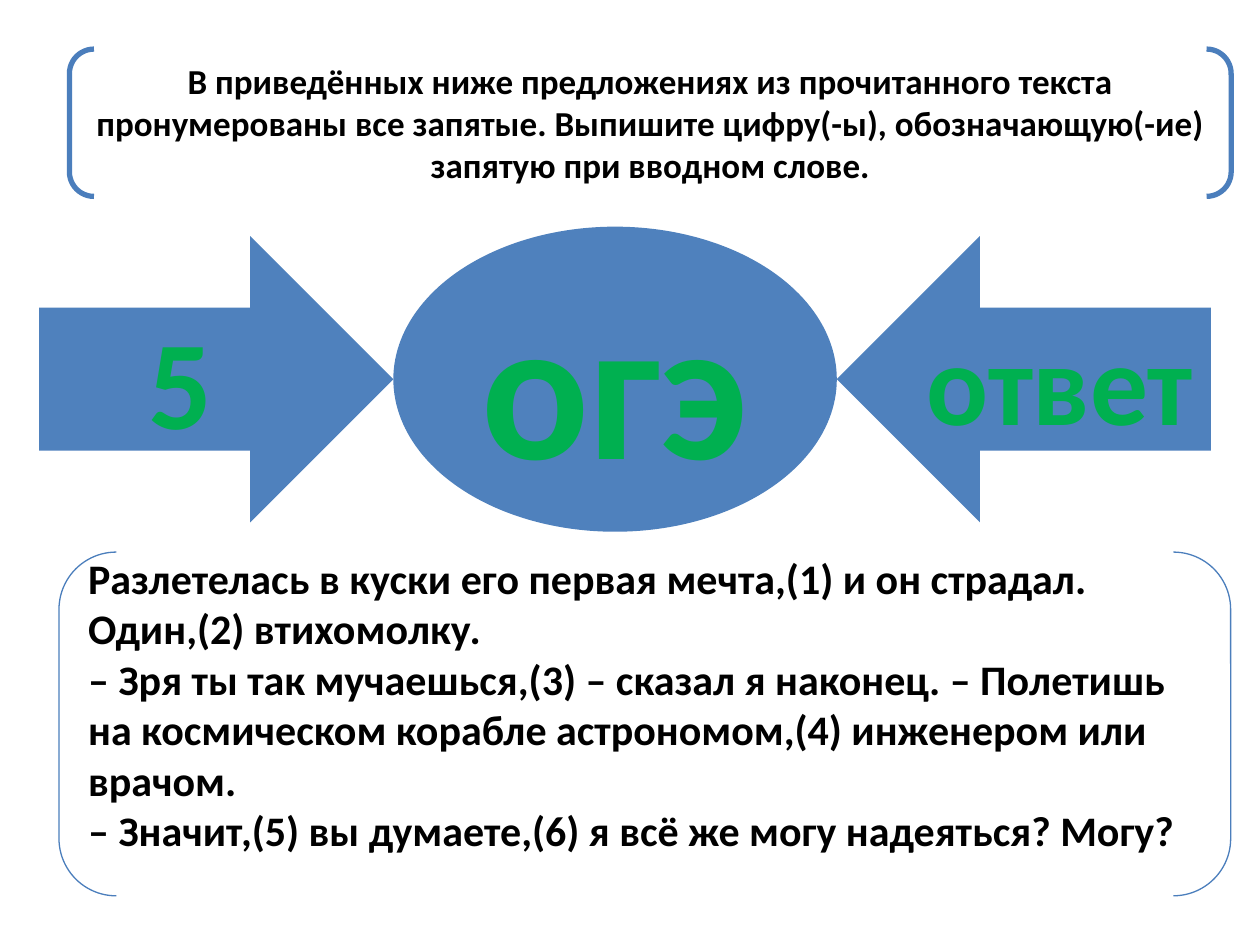
from dataclasses import dataclass

from pptx import Presentation
from pptx.dml.color import RGBColor
from pptx.enum.shapes import MSO_SHAPE
from pptx.enum.text import MSO_ANCHOR, PP_ALIGN
from pptx.util import Cm, Pt

BRACKETS = MSO_SHAPE.DOUBLE_BRACKET
RIGHT_ARROW = MSO_SHAPE.RIGHT_ARROW
LEFT_ARROW = MSO_SHAPE.LEFT_ARROW
OVAL = MSO_SHAPE.OVAL
MIDDLE = MSO_ANCHOR.MIDDLE
LEFT = PP_ALIGN.LEFT
CENTER = PP_ALIGN.CENTER


@dataclass(frozen=True)
class Theme:
    font: str = "Calibri"
    ink: RGBColor = RGBColor(0, 0, 0)
    accent: RGBColor = RGBColor(0x00, 0xB0, 0x50)
    fill: RGBColor = RGBColor(0x4F, 0x81, 0xBD)
    line: RGBColor = RGBColor(0x4B, 0x7E, 0xBC)
    task_size: int = 20
    passage_size: int = 24
    number_size: int = 72
    answer_size: int = 66
    exam_size: int = 115


THEME = Theme()

TASK = [
    "В приведённых ниже предложениях из прочитанного текста пронумерованы все запятые. "
    "Выпишите цифру(-ы), обозначающую(-ие) запятую при вводном слове.",
]
PASSAGE = [
    "Разлетелась в куски его первая мечта,(1) и он страдал. Один,(2) втихомолку.",
    "– Зря ты так мучаешься,(3) – сказал я наконец. – Полетишь на космическом корабле "
    "астрономом,(4) инженером или врачом.",
    "– Значит,(5) вы думаете,(6) я всё же могу надеяться? Могу?",
]


def add_shape(page, kind, box, lines, size, color, align):
    shape = page.shapes.add_shape(kind, *(Cm(length) for length in box))
    shape.shadow.inherit = False
    frame = shape.text_frame
    frame.word_wrap = True
    frame.vertical_anchor = MIDDLE
    for index, line in enumerate(lines):
        para = frame.paragraphs[0] if index == 0 else frame.add_paragraph()
        para.text = line
        para.alignment = align
        para.font.name = THEME.font
        para.font.size = Pt(size)
        para.font.bold = True
        para.font.color.rgb = color
    return shape


def add_bracketed_text(page, box, lines, size, align, line_width, bottom_inset):
    shape = add_shape(page, BRACKETS, box, lines, size, THEME.ink, align)
    shape.fill.background()
    shape.line.color.rgb = THEME.line
    shape.line.width = Pt(line_width)
    shape.text_frame.margin_bottom = Cm(bottom_inset)


def add_arrow_row(page, box):
    left, top, width, height = box
    oval_left, oval_width, arrow_height = 7.14, 8.94, 5.77
    oval_right = oval_left + oval_width
    arrow_top = top + (height - arrow_height) / 2
    parts = [
        (RIGHT_ARROW, (left, arrow_top, oval_left, arrow_height), "5", THEME.number_size),
        (LEFT_ARROW, (left + oval_right, arrow_top, width - oval_right, arrow_height),
         "ответ", THEME.answer_size),
        (OVAL, (left + oval_left, top, oval_width, height), "огэ", THEME.exam_size),
    ]
    for kind, part_box, label, size in parts:
        shape = add_shape(page, kind, part_box, [label], size, THEME.accent, CENTER)
        shape.fill.solid()
        shape.fill.fore_color.rgb = THEME.fill
        shape.line.fill.background()


def main():
    deck = Presentation()
    deck.slide_width = Cm(25.4)
    deck.slide_height = Cm(19.05)
    page = deck.slides.add_slide(deck.slide_layouts[6])
    add_bracketed_text(page, (1.4, 0.99, 23.42, 2.97), TASK, THEME.task_size, CENTER, 3, 0.13)
    add_bracketed_text(page, (1.19, 11.13, 23.62, 6.93), PASSAGE, THEME.passage_size,
                       LEFT, 0.75, 0.94)
    add_arrow_row(page, (0.79, 4.57, 23.62, 6.15))
    deck.save("out.pptx")


if __name__ == "__main__":
    main()
